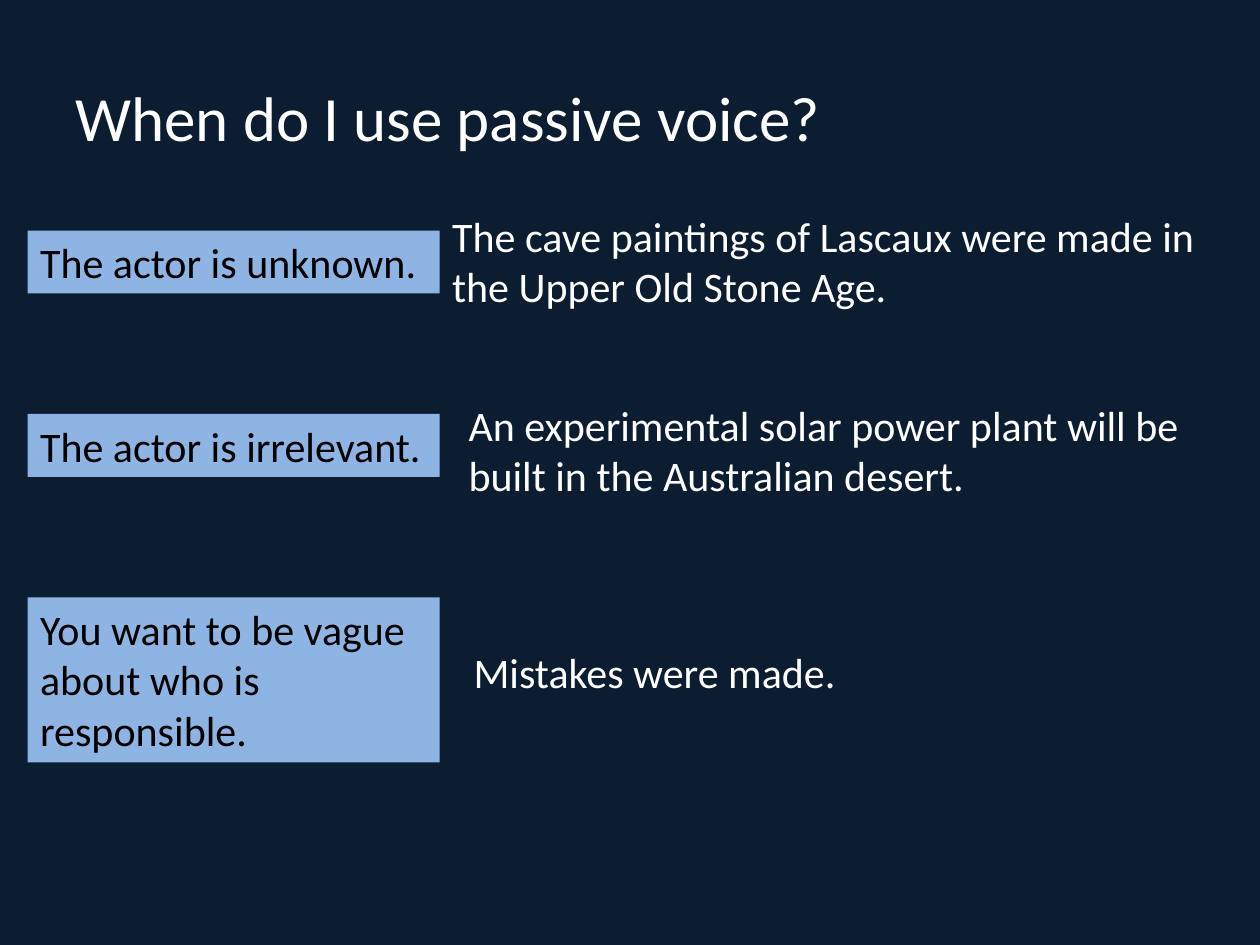
from dataclasses import dataclass

from pptx import Presentation
from pptx import util as u
from pptx.dml.color import RGBColor
from pptx.enum import shapes, text


@dataclass(frozen=True)
class Theme:
    font: str = "Calibri"
    background: str = "0C1D32"
    label_fill: str = "8EB4E3"
    light: str = "FFFFFF"
    dark: str = "000000"
    title_size: float = 36
    body_size: float = 24


class SlideBuilder:
    def __init__(self, slide, theme):
        self.slide = slide
        self.theme = theme

    def background(self):
        fill = self.slide.background.fill
        fill.solid()
        fill.fore_color.rgb = RGBColor.from_string(self.theme.background)

    def set_text(self, shape, wording, size, color, anchor=text.MSO_ANCHOR.TOP):
        frame = shape.text_frame
        frame_format = {"word_wrap": True, "vertical_anchor": anchor}
        for name, value in frame_format.items():
            setattr(frame, name, value)
        paragraph = frame.paragraphs[0]
        paragraph.alignment = text.PP_ALIGN.LEFT
        run = paragraph.add_run()
        run.text = wording
        font_format = {"name": self.theme.font, "size": u.Pt(size)}
        for name, value in font_format.items():
            setattr(run.font, name, value)
        run.font.color.rgb = RGBColor.from_string(color)

    def title(self, wording, bounds):
        shape = self.slide.shapes.add_textbox(*map(u.Pt, bounds))
        self.set_text(shape, wording, self.theme.title_size, self.theme.light,
                      text.MSO_ANCHOR.MIDDLE)

    def example(self, wording, bounds):
        shape = self.slide.shapes.add_textbox(*map(u.Pt, bounds))
        self.set_text(shape, wording, self.theme.body_size, self.theme.light)

    def label(self, wording, bounds):
        shape = self.slide.shapes.add_shape(
            shapes.MSO_SHAPE.RECTANGLE, *map(u.Pt, bounds))
        shape.shadow.inherit = False
        shape.fill.solid()
        shape.fill.fore_color.rgb = RGBColor.from_string(self.theme.label_fill)
        shape.line.fill.background()
        self.set_text(shape, wording, self.theme.body_size, self.theme.dark)


LABEL_LEFT, LABEL_TOP, LABEL_WIDTH, ROW_PITCH = 15.84, 131.76, 235.44, 104.76

ROWS = [
    ("The actor is unknown.", 36,
     "The cave paintings of Lascaux were made in the Upper Old Stone Age.",
     (251.28, 116.64, 443.52, 65.52)),
    ("The actor is irrelevant.", 36,
     "An experimental solar power plant will be built in the Australian desert.",
     (260.64, 224.64, 447.12, 65.52)),
    ("You want to be vague about who is responsible.", 94.32,
     "Mistakes were made.",
     (263.52, 365.76, 447.12, 36)),
]


def main():
    presentation = Presentation()
    presentation.slide_width = u.Pt(720)
    presentation.slide_height = u.Pt(540)
    slide = presentation.slides.add_slide(presentation.slide_layouts[6])
    builder = SlideBuilder(slide, Theme())
    builder.background()
    builder.title("When do I use passive voice?", (36, 21.6, 648, 90))
    for index, (reason, height, sentence, bounds) in enumerate(ROWS):
        top = LABEL_TOP + index * ROW_PITCH
        builder.label(reason, (LABEL_LEFT, top, LABEL_WIDTH, height))
        builder.example(sentence, bounds)
    presentation.save("out.pptx")


if __name__ == "__main__":
    main()
